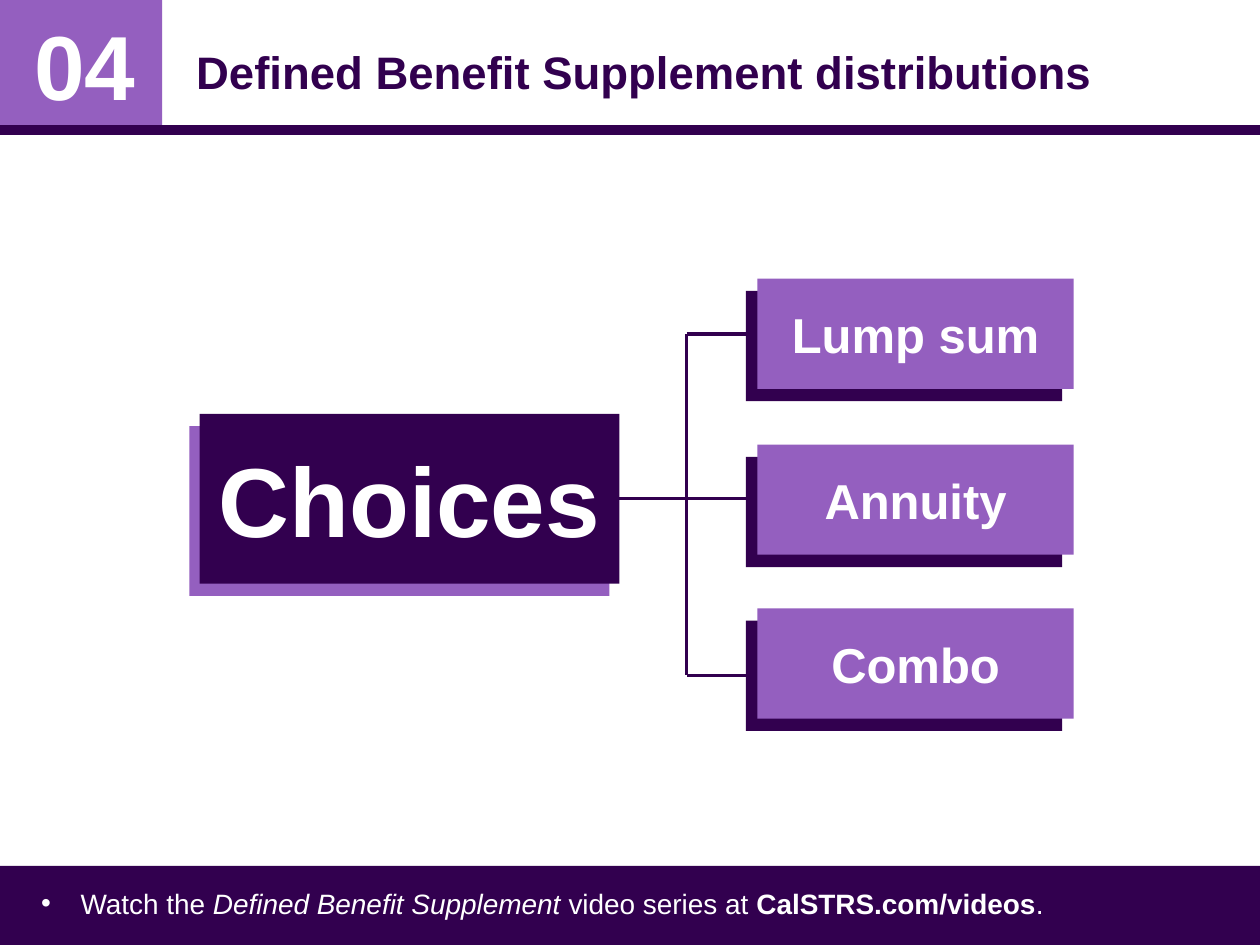
from dataclasses import dataclass

from lxml.etree import SubElement
from pptx import Presentation
from pptx.dml.color import RGBColor
from pptx.enum.shapes import MSO_CONNECTOR as Connector, MSO_SHAPE as Shape
from pptx.enum.text import MSO_ANCHOR as Anchor, PP_ALIGN as Align
from pptx.oxml.ns import qn
from pptx.util import Pt


@dataclass(frozen=True)
class Theme:
    font: str = "Arial"
    dark: RGBColor = RGBColor(0x32, 0x00, 0x4F)
    light: RGBColor = RGBColor(0x94, 0x5F, 0xBF)
    white: RGBColor = RGBColor(0xFF, 0xFF, 0xFF)
    title_size: int = 26
    number_size: int = 52
    root_size: int = 56
    option_size: int = 28
    note_size: int = 16


THEME = Theme()
WIDTH, HEIGHT = 720, 540
SHADE_DROP = 7


def add_block(slide, left, top, width, height, color):
    block = slide.shapes.add_shape(
        Shape.RECTANGLE, Pt(left), Pt(top), Pt(width), Pt(height))
    block.shadow.inherit = False
    block.fill.solid()
    block.fill.fore_color.rgb = color
    block.line.fill.background()
    return block


def add_line(slide, start, end, weight=2):
    line = slide.shapes.add_connector(
        Connector.STRAIGHT, *(Pt(value) for value in (*start, *end)))
    line.line.color.rgb = THEME.dark
    line.line.width = Pt(weight)
    SubElement(line._element.spPr, qn("a:effectLst"))


def add_bullet(paragraph, indent):
    properties = paragraph._p.get_or_add_pPr()
    properties.set("marL", str(Pt(indent)))
    properties.set("indent", str(-Pt(indent)))
    SubElement(properties, qn("a:buFont"), typeface=THEME.font)
    SubElement(properties, qn("a:buChar"), char="•")


def write(shape, *runs, size, color=THEME.white, bold=False, align=Align.LEFT,
          anchor=Anchor.MIDDLE, spacing=1.0, inset=3.6, bullet_indent=None):
    """Fill a shape with one paragraph; a run is a text or (text, style name)."""
    frame = shape.text_frame
    frame.word_wrap = True
    frame.vertical_anchor = anchor
    frame.margin_top = frame.margin_bottom = Pt(inset)
    paragraph = frame.paragraphs[0]
    if bullet_indent:
        add_bullet(paragraph, bullet_indent)
    paragraph.alignment = align
    paragraph.line_spacing = spacing
    for item in runs:
        text, style = (item, None) if isinstance(item, str) else item
        run = paragraph.add_run()
        run.text = text
        run.font.name = THEME.font
        run.font.size = Pt(size)
        run.font.color.rgb = color
        run.font.bold = bold or style == "bold"
        run.font.italic = style == "italic"


def add_text(slide, left, top, width, height, *runs, **text_format):
    box = slide.shapes.add_textbox(Pt(left), Pt(top), Pt(width), Pt(height))
    write(box, *runs, **text_format)


def add_shaded_box(slide, left, top, width, height, text, size, face, shade, shift):
    """Add a labelled box over a second one moved left and down."""
    add_block(slide, left - shift, top + SHADE_DROP, width, height, shade)
    box = add_block(slide, left, top, width, height, face)
    write(box, text, size=size, bold=True, align=Align.CENTER, inset=14.4)


def add_header(slide, number, title):
    add_block(slide, 0, 0, 92.6, 74, THEME.light)
    add_line(slide, (0, 74.4), (WIDTH, 74.4), weight=6)
    add_text(slide, 105, 0.7, 603, 74, title, size=THEME.title_size,
             color=THEME.dark, bold=True, spacing=1.2)
    add_text(slide, 12.2, 5.8, 72.7, 69, number, size=THEME.number_size,
             bold=True, align=Align.CENTER, spacing=0.9)


def add_tree(slide, root, options):
    trunk_x, option_x = 392.4, 432.8
    branch_ys = (190.8, 284.8, 386)
    add_line(slide, (trunk_x, branch_ys[0]), (trunk_x, branch_ys[-1]))
    for y, start_x in zip(branch_ys, (trunk_x, 319, trunk_x)):
        add_line(slide, (start_x, y), (446, y))

    add_shaded_box(slide, 114, 236.5, 240, 97, root, THEME.root_size,
                   THEME.dark, THEME.light, shift=5.8)
    for text, top in zip(options, (159.2, 254, 347.7)):
        add_shaded_box(slide, option_x, top, 180.8, 63, text, THEME.option_size,
                       THEME.light, THEME.dark, shift=6.6)


def add_footer(slide, *runs):
    add_block(slide, 0, 494.8, WIDTH, HEIGHT - 494.8, THEME.dark)
    add_text(slide, 16.4, 502.8, 690.5, 26.6, *runs, size=THEME.note_size,
             anchor=Anchor.TOP, bullet_indent=22.5)


def main():
    presentation = Presentation()
    presentation.slide_width, presentation.slide_height = Pt(WIDTH), Pt(HEIGHT)
    slide = presentation.slides.add_slide(presentation.slide_layouts[6])
    add_header(slide, "04", "Defined Benefit Supplement distributions")
    add_tree(slide, "Choices", ("Lump sum", "Annuity", "Combo"))
    add_footer(slide, "Watch the ", ("Defined Benefit Supplement ", "italic"),
               "video series at ", ("CalSTRS.com/videos", "bold"), ".")
    presentation.save("out.pptx")


if __name__ == "__main__":
    main()
